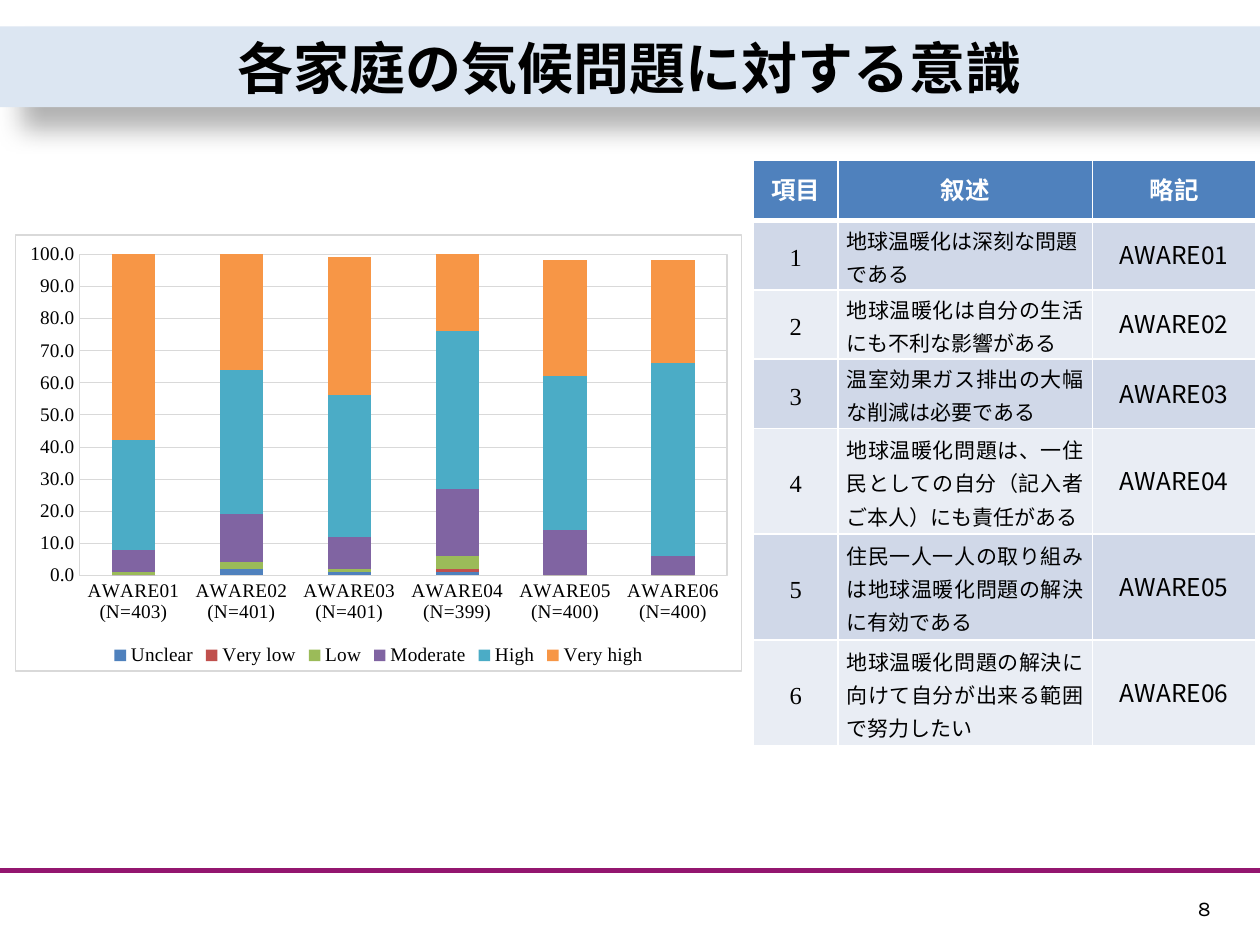
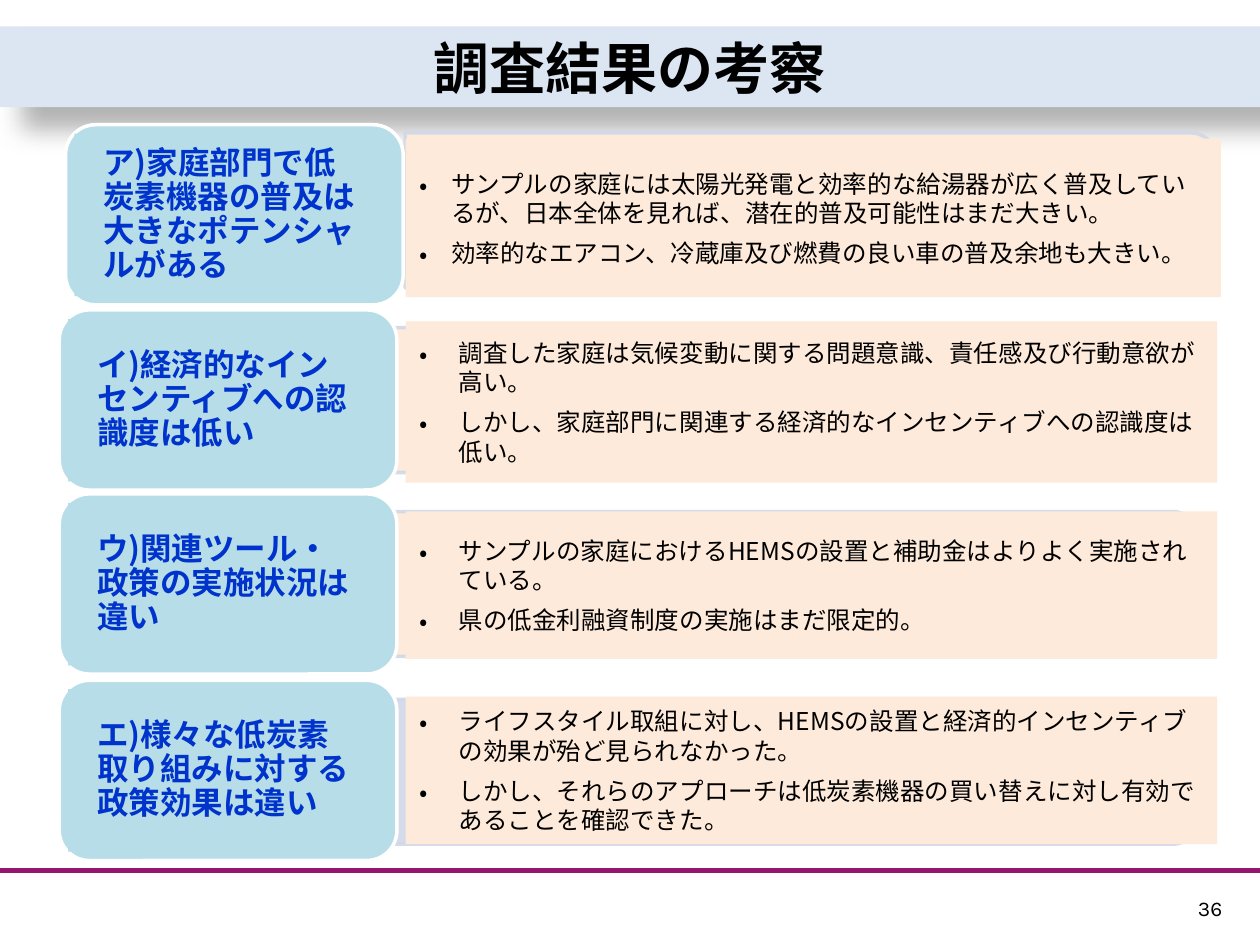
from dataclasses import dataclass

from lxml import etree
from pptx import Presentation
from pptx.chart.data import CategoryChartData
from pptx.dml.color import RGBColor
from pptx.enum.chart import XL_CHART_TYPE, XL_LEGEND_POSITION, XL_TICK_MARK
from pptx.enum.shapes import MSO_CONNECTOR, MSO_SHAPE
from pptx.enum.text import MSO_ANCHOR, PP_ALIGN
from pptx.oxml import parse_xml
from pptx.oxml.ns import nsdecls, qn
from pptx.util import Inches, Pt


@dataclass(frozen=True)
class Theme:
    black: str = "000000"
    white: str = "FFFFFF"
    band: str = "DCE6F2"
    rule: str = "93166F"
    grid: str = "D9D9D9"
    header: str = "4F81BD"
    row_dark: str = "D0D8E8"
    row_light: str = "E9EDF4"
    label: str = "B7DEE8"
    label_text: str = "0033CC"
    panel: str = "FDEADA"
    gothic: str = "Noto Sans CJK JP"
    serif: str = "Times New Roman"
    page_font: str = "Karla"
    title_size: int = 32
    label_size: int = 18
    body_size: int = 14
    small_size: int = 12
    chart_size: int = 11


theme = Theme()


def write_text(frame, *texts, size=theme.body_size, font=theme.gothic, color=theme.black,
               bold=False, align=None, spacing=None, after=None, indent=None,
               anchor=MSO_ANCHOR.MIDDLE, margins=None):
    """Fill a text frame with one paragraph per text; indent adds bullets."""
    frame.word_wrap = True
    frame.vertical_anchor = anchor
    if margins:
        frame.margin_left = frame.margin_right = Inches(margins[0])
        frame.margin_top = frame.margin_bottom = Inches(margins[1])
    for index, text in enumerate(texts):
        paragraph = frame.paragraphs[0] if index == 0 else frame.add_paragraph()
        if indent:
            properties = paragraph._p.get_or_add_pPr()
            properties.set("marL", str(Inches(indent)))
            properties.set("indent", str(-Inches(indent)))
            etree.SubElement(properties, qn("a:buFont")).set("typeface", theme.gothic)
            etree.SubElement(properties, qn("a:buChar")).set("char", "•")
        paragraph.alignment = align
        paragraph.line_spacing = spacing
        paragraph.space_after = after
        run = paragraph.add_run()
        run.text = text
        run.font.size = Pt(size)
        run.font.name = font
        run.font.bold = bold
        run.font.color.rgb = RGBColor.from_string(color)
        east_asian = etree.SubElement(run._r.get_or_add_rPr(), qn("a:ea"))
        east_asian.set("typeface", theme.gothic)


def add_box(slide, kind, left, top, width, height, fill, line=None):
    """Add a flat preset shape, with a 2 pt outline if a line colour is given."""
    shape = slide.shapes.add_shape(kind, Inches(left), Inches(top), Inches(width), Inches(height))
    shape.shadow.inherit = False
    shape.fill.solid()
    shape.fill.fore_color.rgb = RGBColor.from_string(fill)
    if line:
        shape.line.color.rgb = RGBColor.from_string(line)
        shape.line.width = Pt(2)
    else:
        shape.line.fill.background()
    return shape


presentation = Presentation()
presentation.slide_width = Inches(10)
presentation.slide_height = Inches(7.5)

# Shared frame: rule, page number, title band
slides = []
for title, page_number, title_font in [
    ("各家庭の気候問題に対する意識", "8", theme.serif),
    ("調査結果の考察", "36", theme.gothic),
]:
    slide = presentation.slides.add_slide(presentation.slide_layouts[6])
    slides.append(slide)
    rule = slide.shapes.add_connector(
        MSO_CONNECTOR.STRAIGHT, 0, Inches(6.91), Inches(10), Inches(6.91))
    rule.line.color.rgb = RGBColor.from_string(theme.rule)
    rule.line.width = Pt(3)
    etree.SubElement(rule._element.spPr, qn("a:effectLst"))

    page_box = slide.shapes.add_textbox(Inches(9.41), Inches(7.06), Inches(0.47), Inches(0.3))
    write_text(page_box.text_frame, page_number, size=theme.small_size, font=theme.page_font,
               anchor=MSO_ANCHOR.TOP)

    band = add_box(slide, MSO_SHAPE.RECTANGLE, 0, 0.21, 10, 0.64, theme.band)
    band._element.spPr.find(qn("a:effectLst")).append(parse_xml(
        f'<a:outerShdw {nsdecls("a")} blurRad="{Pt(15)}" dist="{Pt(18)}" dir="2700000" '
        f'algn="tl" rotWithShape="0"><a:srgbClr val="{theme.black}">'
        '<a:alpha val="30000"/></a:srgbClr></a:outerShdw>'))
    write_text(band.text_frame, title, size=theme.title_size, font=title_font, bold=True,
               align=PP_ALIGN.CENTER)

awareness_slide, findings_slide = slides

# Awareness chart
chart_data = CategoryChartData(number_format="0")
chart_data.categories = [
    f"AWARE{number:02} (N={count})"
    for number, count in enumerate([403, 401, 401, 399, 400, 400], 1)
]
levels = [
    ("Unclear", "4F81BD", [0, 2, 1, 1, 0, 0]),
    ("Very low", "C0504D", [0, 0, 0, 1, 0, 0]),
    ("Low", "9BBB59", [1, 2, 1, 4, 0, 0]),
    ("Moderate", "8064A2", [7, 15, 10, 21, 14, 6]),
    ("High", "4BACC6", [34, 45, 44, 49, 48, 60]),
    ("Very high", "F79646", [58, 36, 43, 25, 36, 32]),
]
for name, color, values in levels:
    chart_data.add_series(name, values)
chart = awareness_slide.shapes.add_chart(
    XL_CHART_TYPE.COLUMN_STACKED, Inches(0.12), Inches(1.86), Inches(5.77), Inches(3.47),
    chart_data).chart
chart.has_title = False
chart.font.size = Pt(theme.chart_size)
chart.font.name = theme.serif
chart.font.color.rgb = RGBColor.from_string(theme.black)
chart.has_legend = True
chart.legend.position = XL_LEGEND_POSITION.BOTTOM
chart.legend.include_in_layout = False

plot = chart.plots[0]
plot.gap_width = 150
plot.overlap = 100
plot.vary_by_categories = False
for series, (name, color, values) in zip(plot.series, levels):
    series.format.fill.solid()
    series.format.fill.fore_color.rgb = RGBColor.from_string(color)

value_axis, category_axis = chart.value_axis, chart.category_axis
for axis in (value_axis, category_axis):
    axis.major_tick_mark = axis.minor_tick_mark = XL_TICK_MARK.NONE
    axis.tick_labels.font.size = Pt(theme.chart_size)
    axis.tick_labels.font.name = theme.serif
value_axis.minimum_scale = 0
value_axis.maximum_scale = 100
value_axis.major_unit = 10
value_axis.tick_labels.number_format = "0.0"
value_axis.tick_labels.number_format_is_linked = False
value_axis.format.line.fill.background()
for line, width in [(value_axis.major_gridlines.format.line, 0.25),
                    (category_axis.format.line, 0.75)]:
    line.color.rgb = RGBColor.from_string(theme.grid)
    line.width = Pt(width)

# Thin frame around the plot and the whole chart
frame_xml = (f'<c:spPr {nsdecls("c", "a")}><a:noFill/><a:ln w="{Pt(0.75)}"><a:solidFill>'
             f'<a:srgbClr val="{theme.grid}"/></a:solidFill></a:ln></c:spPr>')
chart_element = chart._chartSpace.find(qn("c:chart"))
chart_element.addnext(parse_xml(frame_xml))
chart_element.find(qn("c:plotArea")).append(parse_xml(frame_xml))

# Item table
statements = [
    "地球温暖化は深刻な問題である",
    "地球温暖化は自分の生活にも不利な影響がある",
    "温室効果ガス排出の大幅な削減は必要である",
    "地球温暖化問題は、一住民としての自分（記入者ご本人）にも責任がある",
    "住民一人一人の取り組みは地球温暖化問題の解決に有効である",
    "地球温暖化問題の解決に向けて自分が出来る範囲で努力したい",
]
table_rows = [("項目", "叙述", "略記")] + [
    (str(number), statement, f"AWARE{number:02}")
    for number, statement in enumerate(statements, 1)
]
table = awareness_slide.shapes.add_table(
    len(table_rows), 3, Inches(5.98), Inches(1.27), Inches(3.99), Inches(4.64)).table
for column, width in zip(table.columns, [0.67, 2.02, 1.3]):
    column.width = Inches(width)
for row, height in zip(table.rows, [0.48] + [0.55] * 3 + [0.84] * 3):
    row.height = Inches(height)

for row_index, texts in enumerate(table_rows):
    is_header = row_index == 0
    for column_index, text in enumerate(texts):
        cell = table.cell(row_index, column_index)
        cell.fill.solid()
        cell.fill.fore_color.rgb = RGBColor.from_string(
            theme.header if is_header else theme.row_dark if row_index % 2 else theme.row_light)
        cell.vertical_anchor = MSO_ANCHOR.MIDDLE
        style = {"align": PP_ALIGN.CENTER}
        if is_header:
            style.update(color=theme.white, bold=True)
        elif column_index == 0:
            style.update(font=theme.serif)
        elif column_index == 1:
            style.update(size=theme.small_size,
                         align=PP_ALIGN.LEFT if row_index == 1 else PP_ALIGN.JUSTIFY)
            cell.margin_left = cell.margin_right = Inches(0.07)
            cell.margin_top = cell.margin_bottom = 0
        write_text(cell.text_frame, text, spacing=Pt(19), anchor=None, **style)
        # The rule under the header is thicker than the other borders
        for position, side in enumerate(["lnL", "lnR", "lnT", "lnB"]):
            thick = (is_header and side == "lnB") or (row_index == 1 and side == "lnT")
            cell._tc.get_or_add_tcPr().insert(position, parse_xml(
                f'<a:{side} {nsdecls("a")} w="{Pt(3 if thick else 1)}"><a:solidFill>'
                f'<a:srgbClr val="{theme.white}"/></a:solidFill></a:{side}>'))

# Findings: tab (rotated), panel and label positions, then heading and points
first_tab, other_tab = (5.82, 1.23, 6.44), (5.61, 1.15, 6.63)
findings = [
    (first_tab, -1.55, (1.1, 6.47, 1.26), 0.25, (0.52, 0.99),
     "ア)家庭部門で低炭素機器の普及は大きなポテンシャルがある",
     ["サンプルの家庭には太陽光発電と効率的な給湯器が広く普及しているが、日本全体を見れば、潜在的普及可能性はまだ大きい。",
      "効率的なエアコン、冷蔵庫及び燃費の良い車の普及余地も大きい。"]),
    (other_tab, -0.14, (2.55, 6.44, 1.28), 0.31, (0.47, 2.46),
     "イ)経済的なインセンティブへの認識度は低い",
     ["調査した家庭は気候変動に関する問題意識、責任感及び行動意欲が高い。",
      "しかし、家庭部門に関連する経済的なインセンティブへの認識度は低い。"]),
    (other_tab, 1.32, (4.06, 6.44, 1.17), 0.31, (0.47, 3.92),
     "ウ)関連ツール・政策の実施状況は違い",
     ["サンプルの家庭におけるHEMSの設置と補助金はよりよく実施されている。",
      "県の低金利融資制度の実施はまだ限定的。"]),
    (other_tab, 2.81, (5.53, 6.44, 1.17), 0.31, (0.47, 5.4),
     "エ)様々な低炭素取り組みに対する政策効果は違い",
     ["ライフスタイル取組に対し、HEMSの設置と経済的インセンティブの効果が殆ど見られなかった。",
      "しかし、それらのアプローチは低炭素機器の買い替えに対し有効であることを確認できた。"]),
]
for tab_frame, tab_top, panel_frame, indent, label_corner, heading, points in findings:
    tab_left, tab_width, tab_height = tab_frame
    is_last = heading == findings[-1][5]
    tab = add_box(findings_slide, MSO_SHAPE.ROUND_2_SAME_RECTANGLE, tab_left, tab_top,
                  tab_width, tab_height, theme.row_dark if is_last else theme.panel,
                  theme.row_dark)
    tab.rotation = 90
    for color_element in tab._element.spPr.iter(qn("a:srgbClr")):
        if color_element.get("val") == theme.row_dark:
            etree.SubElement(color_element, qn("a:alpha")).set("val", "90000")

    panel_top, panel_width, panel_height = panel_frame
    panel = add_box(findings_slide, MSO_SHAPE.RECTANGLE, 3.22, panel_top, panel_width,
                    panel_height, theme.panel)
    write_text(panel.text_frame, *points, align=PP_ALIGN.LEFT, after=Pt(6), indent=indent,
               margins=(0.11, 0.06))

    label_left, label_top = label_corner
    add_box(findings_slide, MSO_SHAPE.ROUNDED_RECTANGLE, label_left, label_top, 2.68, 1.43,
            theme.label, theme.white)
    label = add_box(findings_slide, MSO_SHAPE.RECTANGLE, label_left + 0.07, label_top + 0.07,
                    2.52, 1.29, theme.label)
    write_text(label.text_frame, heading, size=theme.label_size, color=theme.label_text,
               bold=True, align=PP_ALIGN.LEFT, spacing=0.9, margins=(0.23, 0.11))

presentation.save("out.pptx")
